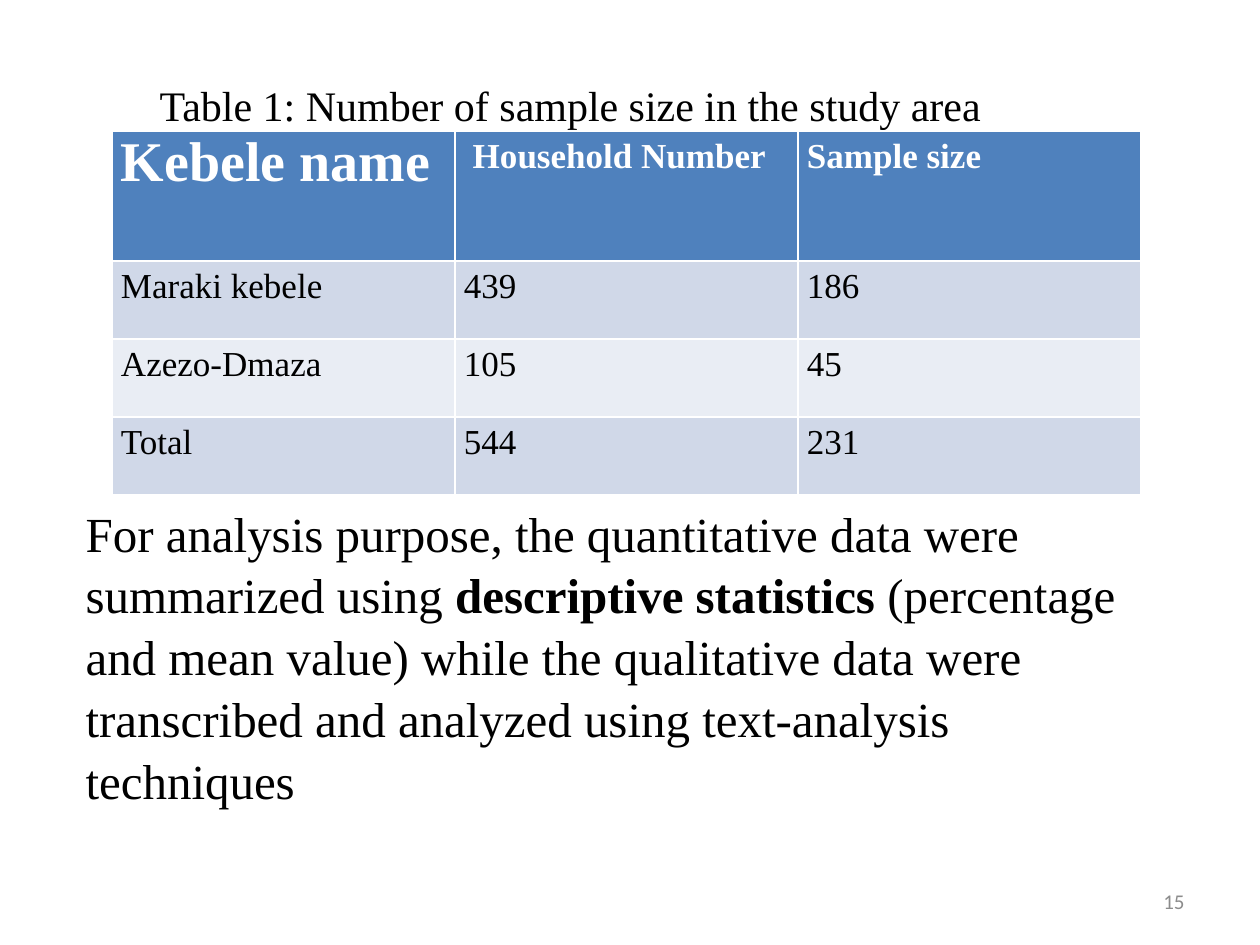
from pptx import Presentation
from pptx.dml.color import RGBColor as Rgb
from pptx.enum.text import MSO_ANCHOR as Anchor, MSO_AUTO_SIZE as Fit, PP_ALIGN as Align
from pptx.oxml.xmlchemy import OxmlElement as Node
from pptx.util import Emu, Pt

PX = 914400 // 126
SERIF = "Times New Roman"
HUES = {"head": "4F81BD", "odd": "D0D8E8", "even": "E9EDF4",
        "white": "FFFFFF", "black": "000000", "gray": "8C8C8C"}
ROWS = [["Kebele name", " Household Number ", "Sample size "],
        ["Maraki kebele", "439", "186"],
        ["Azezo-Dmaza", "105", "45"],
        ["Total", "544", "231"]]
BODY = [("For analysis purpose, the quantitative data were summarized using ", False),
        ("descriptive statistics ", True),
        ("(percentage and mean value) while the qualitative data were "
         "transcribed and analyzed using text-analysis techniques", False)]


def px(n):
    return Emu(n * PX)


def hue(name):
    return Rgb.from_string(HUES[name])


def place(shape, x, y, w, h):
    shape.left, shape.top, shape.width, shape.height = map(px, (x, y, w, h))


def write(para, text, size, color="black", bold=False, face=SERIF):
    run = para.add_run()
    run.text = text
    font = run.font
    font.name, font.size, font.bold = face, Pt(size), bold
    font.color.rgb = hue(color)


def setup(shape, align=Align.LEFT, anchor=Anchor.TOP):
    """Ready the frame for plain text and return its first paragraph."""
    frame = shape.text_frame
    frame.word_wrap, frame.auto_size = True, Fit.NONE
    frame.vertical_anchor = anchor
    para = frame.paragraphs[0]
    para.alignment = align
    para.space_before = Pt(0)
    return para


def add_title(slide):
    title = slide.shapes.title
    place(title, 147, 73, 945, 63)
    write(setup(title), "Table 1: Number of sample size in the study area", 24)


def add_body(slide):
    body = slide.placeholders[1]
    place(body, 73, 494, 1071, 310)
    para = setup(body)
    para.line_spacing = 1.05
    props = para._p.get_or_add_pPr()
    props.set("marL", "0")
    props.set("indent", "0")
    props.append(Node("a:buNone"))
    for text, bold in BODY:
        write(para, text, 28, bold=bold)


def fill_cell(cell, text, row, col):
    head = row == 0
    cell.fill.solid()
    cell.fill.fore_color.rgb = hue("head" if head else "odd" if row % 2 else "even")
    cell.margin_left = cell.margin_right = px(9)
    cell.margin_top = cell.margin_bottom = 0
    para = cell.text_frame.paragraphs[0]
    corner = head and col == 0
    if not corner:
        para.alignment = Align.JUSTIFY
        para.line_spacing = 1.15
        para.space_before = Pt(6 if col or row == 1 else 0)
    write(para, text, 32 if corner else 20, "white" if head else "black", head)


def add_grid(slide):
    grid = slide.shapes.add_table(len(ROWS), len(ROWS[0]), px(112), px(131),
                                  px(1029), px(363)).table
    for r, texts in enumerate(ROWS):
        grid.rows[r].height = px(78 if r else 130)
        for c, text in enumerate(texts):
            fill_cell(grid.cell(r, c), text, r, c)


def add_page(slide):
    box = slide.shapes.add_textbox(px(903), px(876), px(294), px(50))
    write(setup(box, Align.RIGHT, Anchor.MIDDLE), "15", 12, "gray", face="Calibri")


def main():
    deck = Presentation()
    deck.slide_width, deck.slide_height = px(1260), px(945)
    slide = deck.slides.add_slide(deck.slide_layouts[1])
    add_grid(slide)
    add_title(slide)
    add_body(slide)
    add_page(slide)
    deck.save("out.pptx")


if __name__ == "__main__":
    main()
